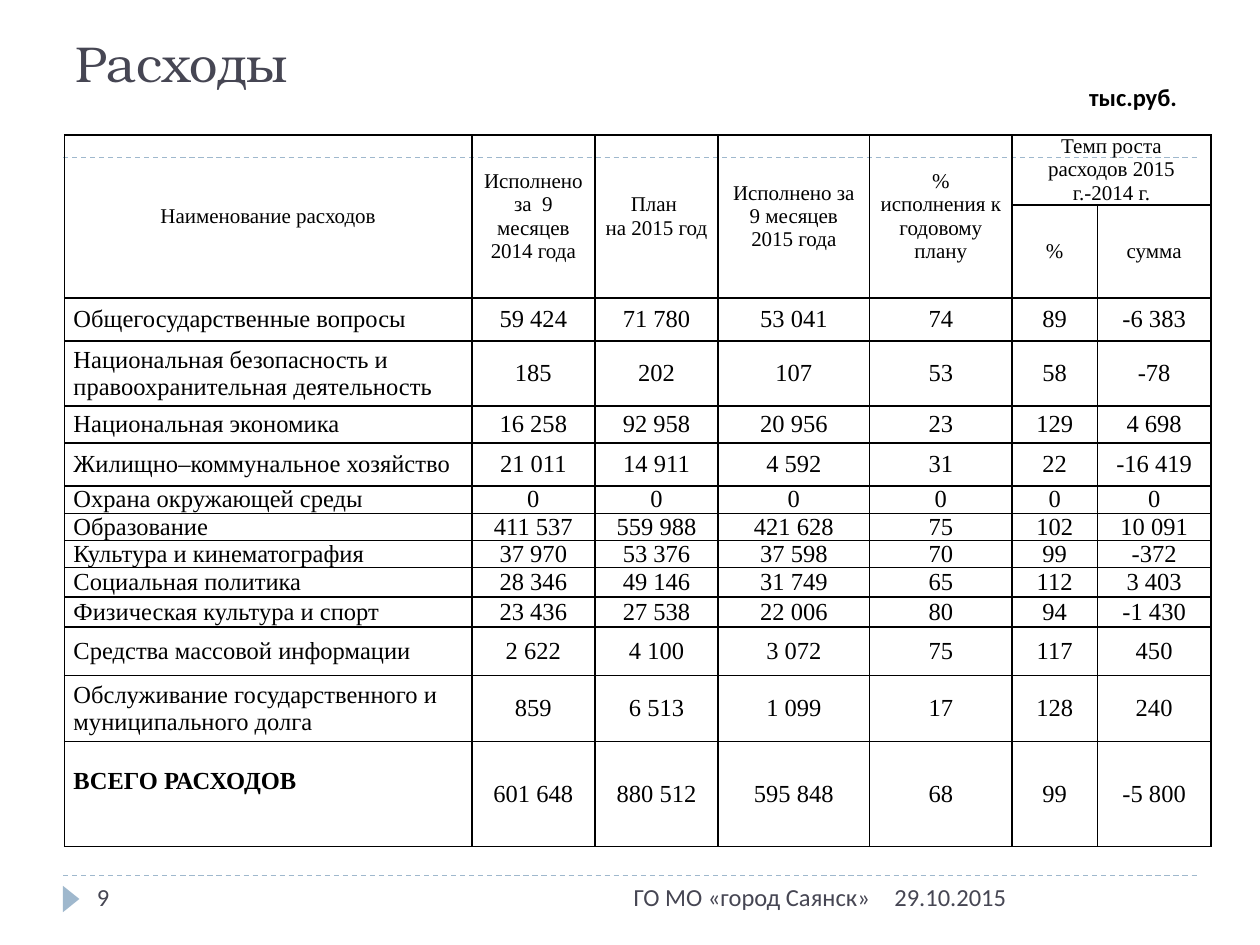
import pptx
import pptx.util
import pptx.dml.color
import pptx.enum.dml
import pptx.enum.shapes
import pptx.enum.text
import pptx.oxml
import pptx.oxml.ns
from lxml import etree

Pt = pptx.util.Pt
ALIGN = pptx.enum.text.PP_ALIGN
ANCHOR = pptx.enum.text.MSO_ANCHOR
COLORS = {"title": "464653", "accent": "9FB8CD", "text": "000000"}


def add_run(paragraph, text, size, font, color, bold=False, align=ALIGN.LEFT):
    paragraph.alignment = align
    run = paragraph.add_run()
    run.text = text
    run.font.size = Pt(size)
    run.font.name = font
    run.font.bold = bold
    run.font.color.rgb = pptx.dml.color.RGBColor.from_string(COLORS[color])


def format_cell(cell):
    cell.margin_left = cell.margin_right = Pt(5)
    cell.margin_top = cell.margin_bottom = 0
    cell.vertical_anchor = ANCHOR.MIDDLE
    properties = cell._tc.get_or_add_tcPr()
    for side in ("lnL", "lnR", "lnT", "lnB"):
        properties.append(pptx.oxml.parse_xml(
            f'<a:{side} {pptx.oxml.ns.nsdecls("a")} w="12700"><a:solidFill>'
            f'<a:srgbClr val="{COLORS["text"]}"/></a:solidFill></a:{side}>'))
    cell.fill.background()


presentation = pptx.Presentation()
presentation.slide_width = Pt(720)
presentation.slide_height = Pt(540)
slide = presentation.slides.add_slide(presentation.slide_layouts[5])
accent = pptx.dml.color.RGBColor.from_string(COLORS["accent"])

# Dashed rules above the table and above the footer
for y in (90, 500.4):
    rule = slide.shapes.add_connector(
        pptx.enum.shapes.MSO_CONNECTOR.STRAIGHT, Pt(36), Pt(y), Pt(684), Pt(y))
    rule.line.color.rgb = accent
    rule.line.width = Pt(0.75)
    rule.line.dash_style = pptx.enum.dml.MSO_LINE.DASH
    etree.SubElement(rule._element.spPr, pptx.oxml.ns.qn("a:effectLst"))

# Footer marker
marker = slide.shapes.add_shape(
    pptx.enum.shapes.MSO_SHAPE.ISOSCELES_TRIANGLE,
    Pt(33.1), Pt(509), Pt(15.1), Pt(9.4))
marker.rotation = 90
marker.shadow.inherit = False
marker.fill.solid()
marker.fill.fore_color.rgb = accent
marker.line.fill.background()

# Title
title = slide.shapes.title
title.left, title.top, title.width, title.height = Pt(36), Pt(12.6), Pt(648), Pt(44)
title.text_frame.vertical_anchor = ANCHOR.BOTTOM
add_run(title.text_frame.paragraphs[0], "Расходы", 28.8, "TeX Gyre Bonum", "title")

# Footer texts and unit label: text, left, top, width, height, colour, bold, alignment
labels = [
    ("29.10.2015", 504, 500.4, 180, 28.8, "title", False, ALIGN.LEFT),
    ("ГО МО «город Саянск»", 228.3, 500.4, 276, 28.8, "title", False, ALIGN.RIGHT),
    ("9", 48.3, 500.4, 156, 28.8, "title", False, ALIGN.LEFT),
    ("тыс.руб.", 615.2, 43.2, 73.4, 24.2, "text", True, ALIGN.LEFT),
]
for text, left, top, width, height, color, bold, align in labels:
    box = slide.shapes.add_textbox(Pt(left), Pt(top), Pt(width), Pt(height))
    box.text_frame.word_wrap = True
    add_run(box.text_frame.paragraphs[0], text, 14, "Calibri", color, bold, align)

# Expense table: header spans two rows, the last two columns share a heading
header = [
    ["Наименование расходов", "Исполнено за  9 месяцев 2014 года",
     "План \nна 2015 год ", "Исполнено за 9 месяцев 2015 года",
     "% исполнения к годовому плану", "Темп роста расходов 2015 г.-2014 г.", ""],
    ["", "", "", "", "", "%", "сумма"],
]
expenses = [
    ["Общегосударственные вопросы", "59 424", "71 780", "53 041", "74", "89", "-6 383"],
    ["Национальная безопасность и правоохранительная деятельность",
     "185", "202", "107", "53", "58", "-78"],
    ["Национальная экономика", "16 258", "92 958", "20 956", "23", "129", "4 698"],
    ["Жилищно–коммунальное хозяйство", "21 011", "14 911", "4 592", "31", "22", "-16 419"],
    ["Охрана окружающей среды", "0", "0", "0", "0", "0", "0"],
    ["Образование", "411 537", "559 988", "421 628", "75", "102", "10 091"],
    ["Культура и кинематография", "37 970", "53 376", "37 598", "70", "99", "-372"],
    ["Социальная политика", "28 346", "49 146", "31 749", "65", "112", "3 403"],
    ["Физическая культура и спорт", "23 436", "27 538", "22 006", "80", "94", "-1 430"],
    ["Средства массовой информации", "2 622", "4 100", "3 072", "75", "117", "450"],
    ["Обслуживание государственного и муниципального долга",
     "859", "6 513", "1 099", "17", "128", "240"],
    ["ВСЕГО РАСХОДОВ", "601 648", "880 512", "595 848", "68", "99", "-5 800"],
]
rows = header + expenses
column_widths = [232.6, 70.4, 70.4, 86.6, 81.4, 48.7, 65]
row_heights = [40, 53.2, 24.5, 37.3, 21, 24.6, 15.8, 15.5, 15.5, 16.8, 17.1, 27.9, 37.6, 60]
table = slide.shapes.add_table(
    len(rows), len(column_widths), Pt(37), Pt(77.1),
    Pt(sum(column_widths)), Pt(sum(row_heights))).table
table.first_row = table.horz_banding = False
for column, width in zip(table.columns, column_widths):
    column.width = Pt(width)
for row, height in zip(table.rows, row_heights):
    row.height = Pt(height)

for row_index, row in enumerate(rows):
    in_header = row_index < len(header)
    size, line_height = (12, 13.3) if in_header else (14, 15.4)
    for column_index, text in enumerate(row):
        cell = table.cell(row_index, column_index)
        format_cell(cell)
        if not text:
            continue
        is_name = column_index == 0 and not in_header
        for line_index, line in enumerate(text.split("\n")):
            frame = cell.text_frame
            paragraph = frame.add_paragraph() if line_index else frame.paragraphs[0]
            paragraph.line_spacing = Pt(line_height)
            add_run(paragraph, line, size, "Times New Roman", "text",
                    is_name and row is rows[-1], ALIGN.LEFT if is_name else ALIGN.CENTER)

for column_index in range(5):
    table.cell(0, column_index).merge(table.cell(1, column_index))
table.cell(0, 5).merge(table.cell(0, 6))

# The total's label sits a little above the middle of its row
table.cell(len(rows) - 1, 0).margin_bottom = Pt(15)

presentation.save("out.pptx")
